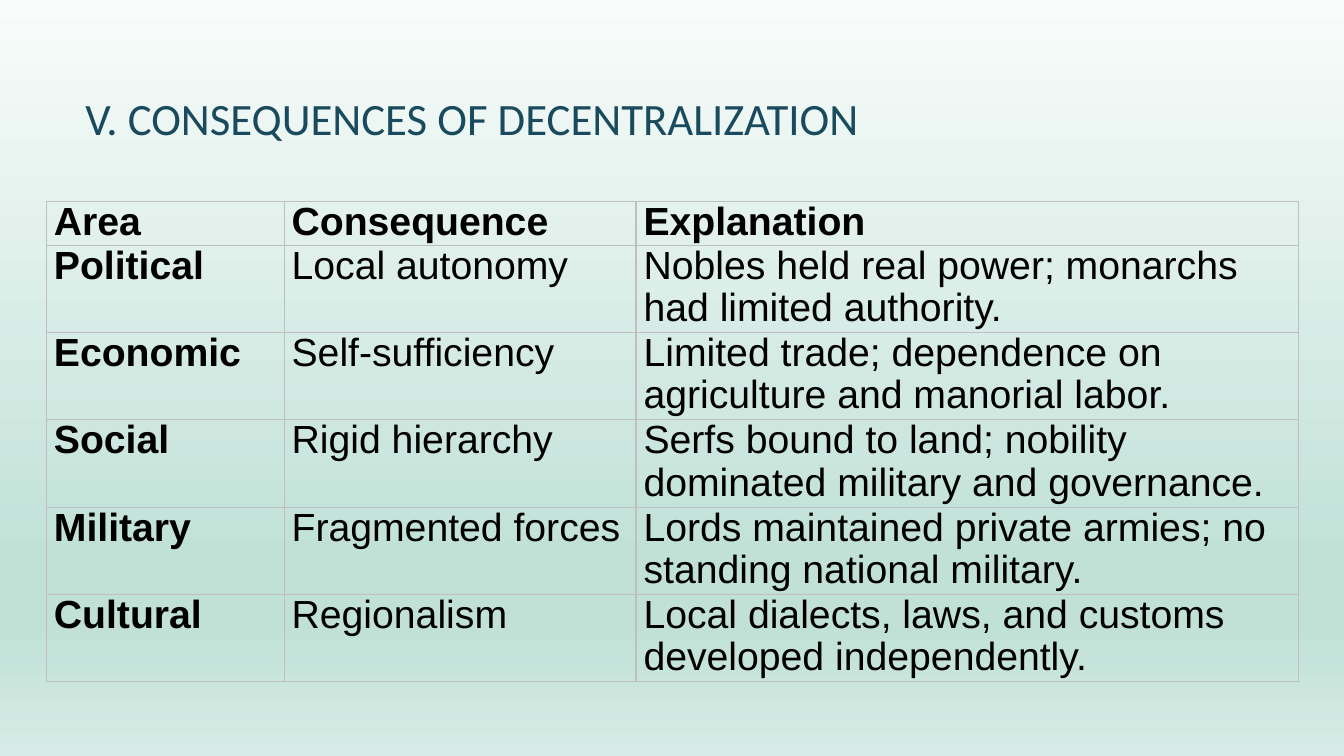
"""Build the slide on the consequences of decentralization."""
from copy import deepcopy

from pptx import Presentation
from pptx.dml.color import RGBColor
from pptx.enum import text as t
from pptx.oxml import parse_xml
from pptx.oxml.ns import nsdecls
from pptx.util import Cm, Pt

TITLE = "V. CONSEQUENCES OF DECENTRALIZATION"
ROWS = [
    ("Area", "Consequence", "Explanation"),
    ("Political", "Local autonomy",
     "Nobles held real power; monarchs had limited authority."),
    ("Economic", "Self-sufficiency",
     "Limited trade; dependence on agriculture and manorial labor."),
    ("Social", "Rigid hierarchy",
     "Serfs bound to land; nobility dominated military and governance."),
    ("Military", "Fragmented forces",
     "Lords maintained private armies; no standing national military."),
    ("Cultural", "Regionalism",
     "Local dialects, laws, and customs developed independently."),
]
COLS = (5.99, 8.87, 16.69)
LINE = 1.1
STOPS = [(0, "F8FCFB"), (74, "C1E1D7"), (83, "C1E1D7"), (100, "D6EBE5")]
INK = {"title": "1A4A5D", "text": "000000", "rule": "BFBFBF"}


def style(par, font, size, color, bold=False):
    par.font.name = font
    par.font.size = Pt(size)
    par.font.bold = bold
    par.font.color.rgb = RGBColor.from_string(color)


def paint(slide):
    fill = slide.background.fill
    fill.gradient()
    fill.gradient_angle = 270
    stops = slide.element.xpath(".//a:gsLst")[0]
    for old in list(stops):
        stops.remove(old)
    for pos, color in STOPS:
        stops.append(parse_xml(
            f'<a:gs {nsdecls("a")} pos="{pos * 1000}">'
            f'<a:srgbClr val="{color}"/></a:gs>'))


def head(slide):
    box = slide.shapes.title
    box.left, box.top, box.width, box.height = Cm(1.9), Cm(0.94), Cm(27.1), Cm(2.84)
    frame = box.text_frame
    frame.text = TITLE
    frame.word_wrap = True
    frame.vertical_anchor = t.MSO_ANCHOR.BOTTOM
    par = frame.paragraphs[0]
    par.alignment = t.PP_ALIGN.LEFT
    par.line_spacing = 0.9
    style(par, "Calibri", 32, INK["title"])


def rule(cell):
    props = cell._tc.get_or_add_tcPr()
    for side in "LRTB":
        props.append(parse_xml(
            f'<a:ln{side} {nsdecls("a")} w="12700"><a:solidFill>'
            f'<a:srgbClr val="{INK["rule"]}"/></a:solidFill></a:ln{side}>'))


def grid(slide):
    lines = [1] + [2] * (len(ROWS) - 1)
    table = slide.shapes.add_table(
        len(ROWS), len(COLS), Cm(1.17), Cm(5.08),
        Cm(sum(COLS)), Cm(LINE * sum(lines))).table
    table.first_row = table.horz_banding = False
    for col, width in zip(table.columns, COLS):
        col.width = Cm(width)
    for r, row in enumerate(ROWS):
        table.rows[r].height = Cm(LINE * lines[r])
        for c, words in enumerate(row):
            cell = table.cell(r, c)
            cell.text = words
            cell.margin_left = cell.margin_right = Cm(0.19)
            cell.margin_top = cell.margin_bottom = 0
            rule(cell)
            cell.fill.background()
            par = cell.text_frame.paragraphs[0]
            par.line_spacing = 0.97
            style(par, "Arial", 28, INK["text"], r == 0 or c == 0)


def main():
    deck = Presentation()
    deck.slide_width, deck.slide_height = Cm(33.87), Cm(19.05)
    slide = deck.slides.add_slide(deck.slide_layouts[5])
    paint(slide)
    head(slide)
    grid(slide)
    deck.save("out.pptx")


if __name__ == "__main__":
    main()
